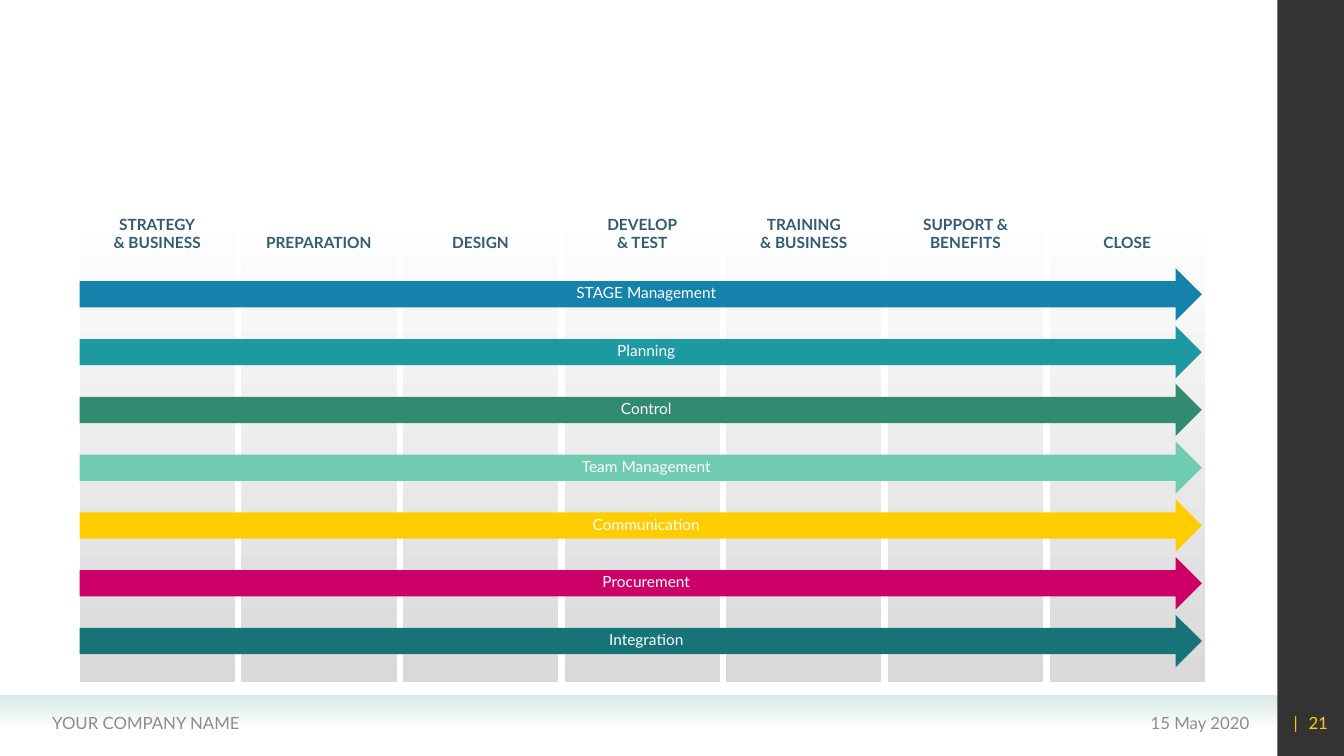
from dataclasses import dataclass

from lxml import etree
from pptx import Presentation
from pptx.dml.color import RGBColor
from pptx.enum.shapes import MSO_SHAPE
from pptx.enum.text import MSO_ANCHOR, MSO_AUTO_SIZE, PP_ALIGN
from pptx.oxml.ns import qn
from pptx.util import Inches, Pt

RECT, ARROW = MSO_SHAPE.RECTANGLE, MSO_SHAPE.RIGHT_ARROW
LEFT, MID, RIGHT = PP_ALIGN.LEFT, PP_ALIGN.CENTER, PP_ALIGN.RIGHT
MIDDLE, BOTTOM = MSO_ANCHOR.MIDDLE, MSO_ANCHOR.BOTTOM
GROW, FIXED = MSO_AUTO_SIZE.SHAPE_TO_FIT_TEXT, MSO_AUTO_SIZE.NONE

FONT = "Lato"
WHITE = RGBColor(0xFF, 0xFF, 0xFF)
BLACK = RGBColor(0x00, 0x00, 0x00)
SILVER = RGBColor(0xD9, 0xD9, 0xD9)
MIST = RGBColor(0xD9, 0xE9, 0xE8)
GREY = RGBColor(0x8C, 0x8C, 0x8C)
NAVY = RGBColor(0x33, 0x5B, 0x74)
BLUE = RGBColor(0x14, 0x82, 0xAB)
TEAL = RGBColor(0x1D, 0x9A, 0xA1)
GREEN = RGBColor(0x31, 0x8B, 0x71)
MINT = RGBColor(0x70, 0xCC, 0xB1)
GOLD = RGBColor(0xFF, 0xCC, 0x00)
PINK = RGBColor(0xCC, 0x00, 0x66)
PINE = RGBColor(0x16, 0x74, 0x79)

# Grid in inches
WIDE, HIGH = 13.33, 7.5
SIDE = 12.67                      # left edge of the dark side bar
X0, STEP, COL = 0.79, 1.6033, 1.54
TOP, DEEP = 2.05, 4.72
HEAD_END = 2.55                   # shared bottom of the headings
ROW0, PITCH, THICK = 2.66, 0.5733, 0.52
SPAN, AXIS = 11.13, 6.41          # arrow length, centre of the labels
LINE, PAD = 0.18, 0.11            # height of a text line and its margins


@dataclass
class Box:
    x: float
    y: float
    w: float
    h: float

    def place(self) -> list:
        return [Inches(v) for v in (self.x, self.y, self.w, self.h)]


@dataclass
class Stage:
    name: str
    width: float


@dataclass
class Track:
    name: str
    color: RGBColor
    width: float


STAGES = [
    Stage("STRATEGY\n& BUSINESS", 1.3),
    Stage("PREPARATION", 1.49),
    Stage("DESIGN", 0.91),
    Stage("DEVELOP\n& TEST", 1.05),
    Stage("TRAINING\n& BUSINESS", 1.3),
    Stage("SUPPORT &\nBENEFITS", 1.28),
    Stage("CLOSE", 0.78),
]
TRACKS = [
    Track("STAGE Management", BLUE, 5.81),
    Track("Planning", TEAL, 2.98),
    Track("Control", GREEN, 2.75),
    Track("Team Management", MINT, 5.71),
    Track("Communication", GOLD, 4.81),
    Track("Procurement", PINK, 4.12),
    Track("Integration", PINE, 3.59),
]


def fade(tint, share: int) -> None:
    """Set the opacity of a colour element, in percent."""
    etree.SubElement(tint, qn("a:alpha")).set("val", str(share * 1000))


def draw(slide, kind, box: Box, color: RGBColor, end: RGBColor | None = None):
    """Add a borderless shape, plain or fading downwards to a second colour."""
    shape = slide.shapes.add_shape(kind, *box.place())
    shape.shadow.inherit = False
    shape.line.fill.background()
    if end is None:
        shape.fill.solid()
        shape.fill.fore_color.rgb = color
    else:
        shape.fill.gradient()
        shape.fill.gradient_angle = 270
        for stop, tone in zip(shape.fill.gradient_stops, (color, end)):
            stop.color.rgb = tone
    return shape


def write(slide, text: str, box: Box, *, size: int = 11, color: RGBColor = WHITE,
          bold: bool = False, align=MID, anchor=MIDDLE, fit=GROW,
          lead: str = "") -> None:
    """Add a text box; lead is a widely spaced run before each line."""
    frame = slide.shapes.add_textbox(*box.place()).text_frame
    frame.word_wrap = True
    frame.auto_size = fit
    frame.vertical_anchor = anchor
    for i, line in enumerate(text.split("\n")):
        para = frame.add_paragraph() if i else frame.paragraphs[0]
        para.alignment = align
        for part in filter(None, (lead, line)):
            run = para.add_run()
            run.text = part
            font = run.font
            font.name, font.size, font.bold = FONT, Pt(size), bold
            font.color.rgb = color
        if lead:
            para.runs[0].font._element.set("spc", "230")


def frame_page(slide) -> None:
    # Footer band and side bar
    band = draw(slide, RECT, Box(0, 6.9, SIDE, 0.31), MIST, MIST)
    fade(list(band._element.iter(qn("a:srgbClr")))[-1], 0)
    bar = draw(slide, RECT, Box(SIDE, 0, WIDE - SIDE, HIGH), BLACK)
    fade(next(bar._element.iter(qn("a:srgbClr"))), 80)

    # Footer texts
    foot = {"size": 12, "fit": FIXED}
    write(slide, "15 May 2020", Box(9.1, 6.97, 3.39, 0.4),
          color=GREY, align=RIGHT, **foot)
    write(slide, "YOUR COMPANY NAME", Box(0.42, 6.97, 4.9, 0.4),
          color=GREY, align=LEFT, **foot)
    write(slide, "21", Box(12.6, 6.97, 0.67, 0.4),
          color=GOLD, align=RIGHT, lead="| ", **foot)


def main() -> None:
    deck = Presentation()
    deck.slide_width, deck.slide_height = Inches(WIDE), Inches(HIGH)
    slide = deck.slides.add_slide(deck.slide_layouts[6])
    frame_page(slide)

    # Stage columns with headings
    for i, stage in enumerate(STAGES):
        x = X0 + i * STEP
        draw(slide, RECT, Box(x, TOP, COL, DEEP), WHITE, SILVER)
        tall = PAD + LINE * len(stage.name.split("\n"))
        write(slide, stage.name,
              Box(x + (COL - stage.width) / 2, HEAD_END - tall, stage.width, tall),
              color=NAVY, bold=True, anchor=BOTTOM)

    # Arrows across all stages
    for i, track in enumerate(TRACKS):
        y = ROW0 + i * PITCH
        draw(slide, ARROW, Box(X0, y, SPAN, THICK), track.color)
        write(slide, track.name,
              Box(AXIS - track.width / 2, y + 0.1, track.width, PAD + LINE))

    deck.save("out.pptx")


if __name__ == "__main__":
    main()
